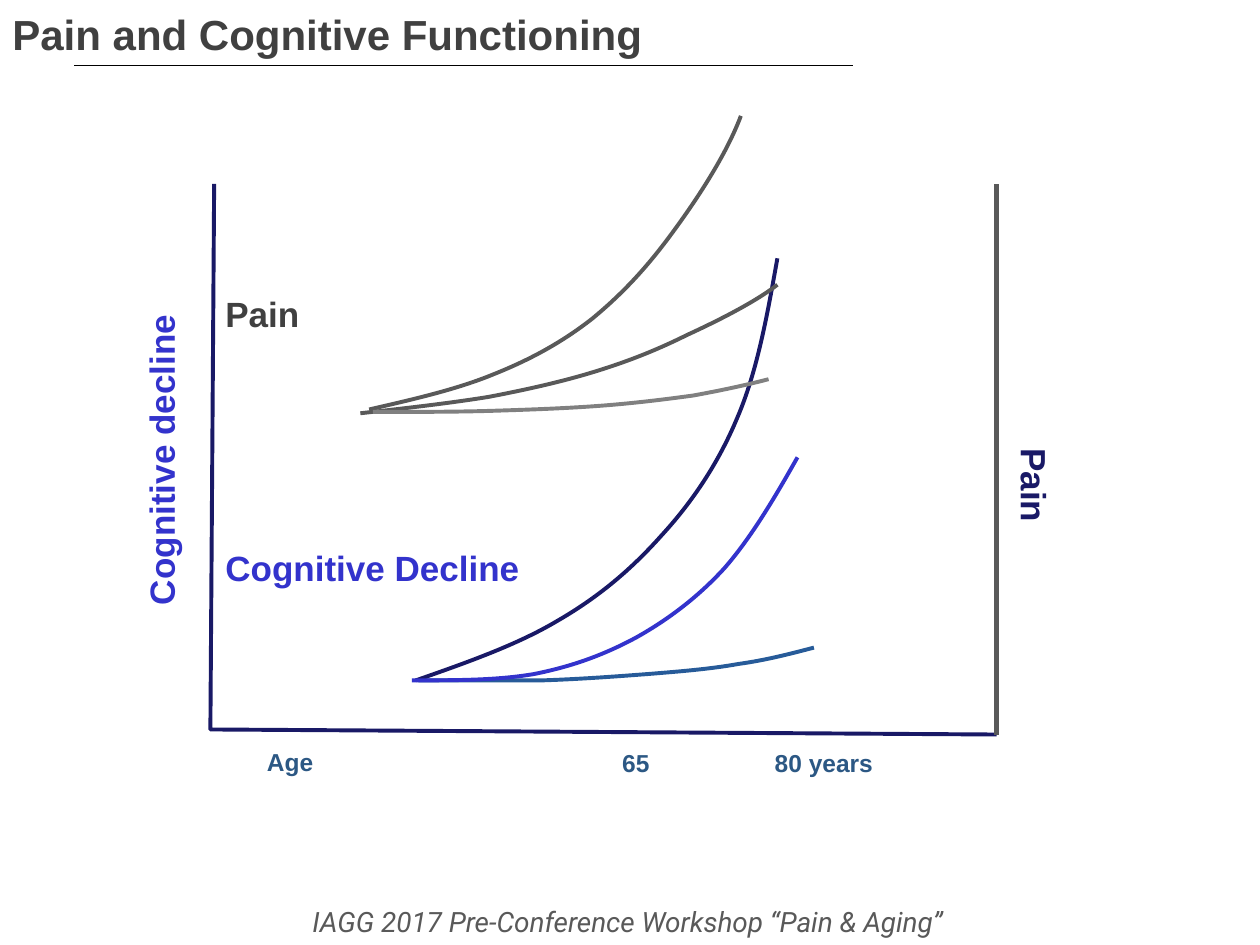
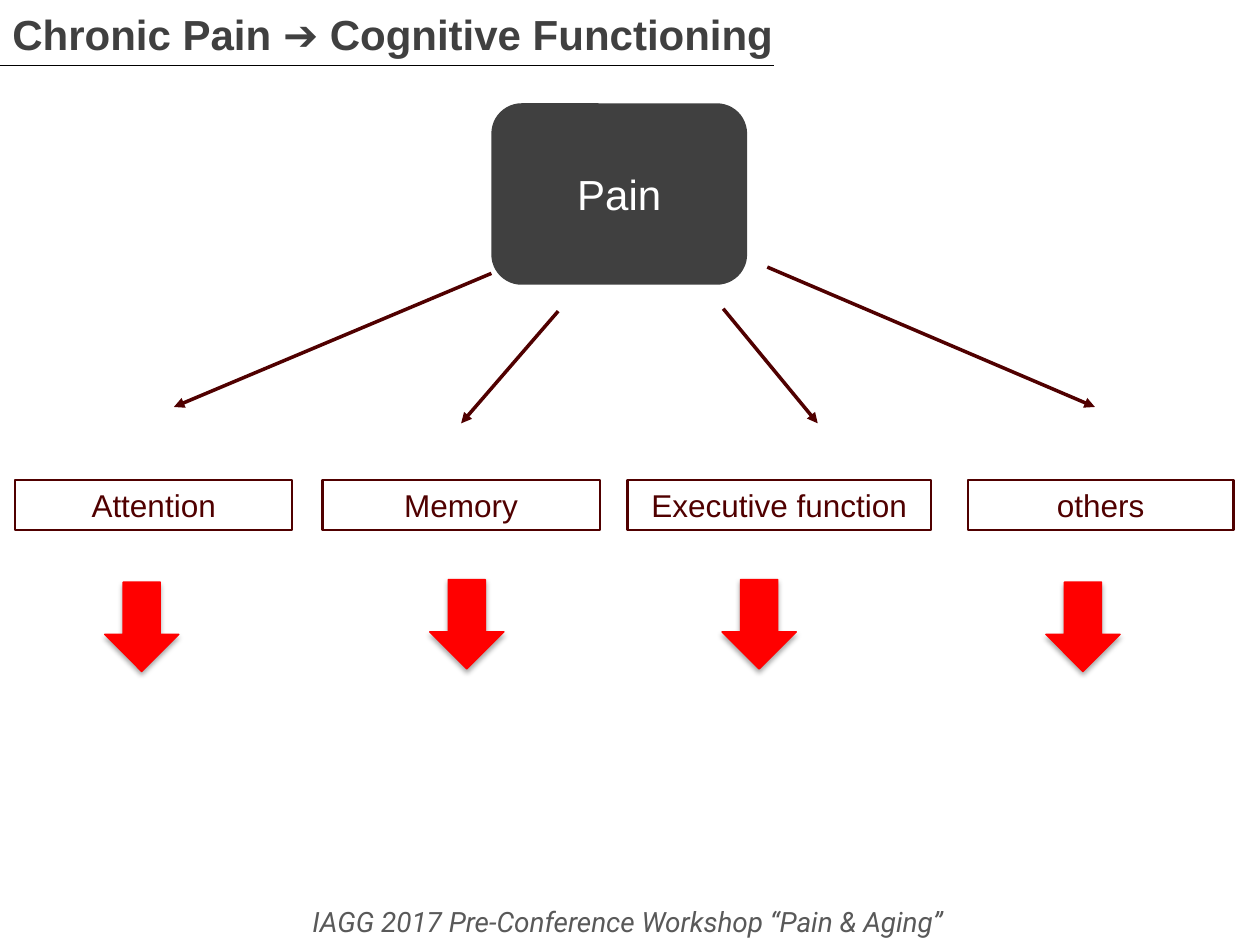
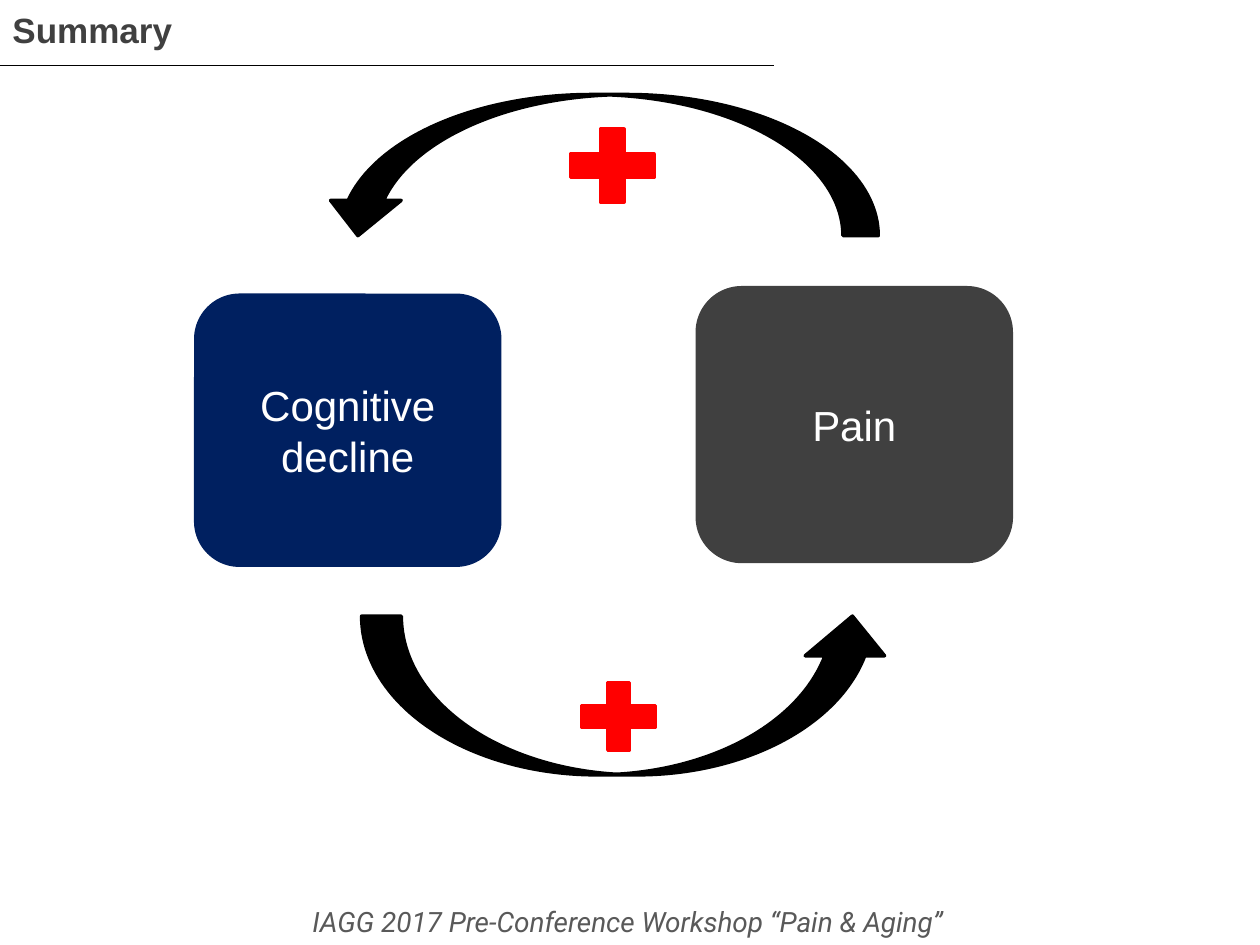
from lxml import etree
from pptx import Presentation
from pptx.dml.color import RGBColor
from pptx.enum import shapes, text
from pptx.oxml.ns import qn
from pptx.util import Inches, Pt

# Shared look
CHARCOAL, GREY, MAROON, RED, BLACK = "404040", "595959", "500000", "FF0000", "000000"
INDIGO, NAVY, AGE_BLUE, WHITE = "3333CC", "191966", "2C5884", "FFFFFF"
FOOTER = "IAGG 2017 Pre-Conference Workshop “Pain & Aging” "
SHAPE = shapes.MSO_SHAPE
CENTER = text.PP_ALIGN.CENTER

# Slide 1: text, box, size, colour, options
CHART_LABELS = [
    ("Cognitive decline", (0.02, 3.42, 2.52, 0.44), 20, INDIGO, {"rotation": 270}),
    ("Pain ", (6.66, 3.67, 3.1, 0.44), 20, NAVY,
     {"rotation": 90, "align": CENTER, "wrap": True}),
    ("Cognitive Decline", (1.69, 4.29, 2.55, 0.44), 20, INDIGO, {}),
    ("Pain", (1.69, 2.27, 1.84, 0.44), 20, CHARCOAL, {}),
    ("Age", (2.02, 5.88, 0.57, 0.34), 14, AGE_BLUE, {}),
    ("65", (4.84, 5.89, 0.5, 0.34), 14, AGE_BLUE, {}),
    ("80 years", (6.05, 5.89, 0.99, 0.34), 14, AGE_BLUE, {}),
]
AXES = [(1.7, 1.46), (1.67, 5.79), (7.91, 5.83)]
PAIN_AXIS = (7.91, 5.83), (7.91, 1.46)
# Each curve: start, then two handles and an end for every section
CURVES = [
    (GREY, [(2.93, 3.25), (3.28, 3.17), (3.63, 3.09), (3.92, 2.97),
            (4.22, 2.85), (4.47, 2.71), (4.7, 2.53), (4.93, 2.34), (5.12, 2.14),
            (5.32, 1.87), (5.52, 1.6), (5.76, 1.24), (5.88, 0.92)]),
    ("275B99", [(3.32, 5.4), (3.66, 5.4), (4.01, 5.4), (4.31, 5.4),
                (4.61, 5.39), (4.88, 5.37), (5.14, 5.35), (5.39, 5.33), (5.64, 5.31),
                (5.86, 5.27), (6.08, 5.24), (6.27, 5.19), (6.46, 5.14)]),
    (NAVY, [(3.3, 5.4), (3.7, 5.26), (4.1, 5.12), (4.42, 4.93),
            (4.75, 4.74), (5.01, 4.52), (5.25, 4.25), (5.49, 3.99), (5.7, 3.68),
            (5.85, 3.32), (6.01, 2.95), (6.09, 2.5), (6.17, 2.05)]),
    (INDIGO, [(3.27, 5.4), (3.61, 5.4), (3.95, 5.4), (4.24, 5.35),
              (4.54, 5.29), (4.79, 5.2), (5.05, 5.06), (5.3, 4.92), (5.54, 4.74),
              (5.75, 4.51), (5.96, 4.27), (6.15, 3.95), (6.33, 3.63)]),
    (GREY, [(2.86, 3.28), (3.22, 3.24), (3.57, 3.2), (3.88, 3.15),
            (4.19, 3.09), (4.46, 3.03), (4.72, 2.95), (4.98, 2.87), (5.21, 2.78),
            (5.45, 2.66), (5.69, 2.55), (5.99, 2.4), (6.17, 2.26)]),
    ("808080", [(2.96, 3.27), (3.3, 3.27), (3.65, 3.27), (3.95, 3.26),
                (4.26, 3.25), (4.52, 3.24), (4.78, 3.22), (5.04, 3.2), (5.28, 3.17),
                (5.5, 3.14), (5.72, 3.1), (5.91, 3.06), (6.1, 3.01)]),
]

# Slide 2: function, box left and width, ray from pain, top left of the down arrow
FUNCTIONS = [
    ("Attention", 0.12, 2.2, (3.9, 2.17), (1.38, 3.23), (0.83, 4.62)),
    ("Memory", 2.56, 2.2, (4.43, 2.47), (3.66, 3.36), (3.41, 4.6)),
    ("Executive function", 4.98, 2.41, (5.74, 2.45), (6.49, 3.36), (5.73, 4.6)),
    ("others", 7.68, 2.11, (6.09, 2.12), (8.69, 3.23), (8.3, 4.62)),
]

# Slide 3: the two states, and the arrows and plus signs of the loop
STATES = [("Cognitive decline", (1.54, 2.33, 2.44, 2.17), "002060"),
          ("Pain", (5.52, 2.27, 2.52, 2.2), CHARCOAL)]
LOOP = [
    (SHAPE.CURVED_UP_ARROW, (2.87, 4.89, 4.21, 1.26), BLACK, 0),
    (SHAPE.CURVED_UP_ARROW, (2.56, 0.75, 4.41, 1.12), BLACK, 180),
    (SHAPE.MATH_PLUS, (4.51, 5.32, 0.8, 0.73), RED, 0),
    (SHAPE.MATH_PLUS, (4.41, 0.92, 0.9, 0.79), RED, 0),
]


def rgb(color):
    return RGBColor.from_string(color)


def inches(values):
    return [Inches(value) for value in values]


def write(frame, words, size, color, font="Arial", bold=False, italic=False, align=None):
    frame.text = words
    line = frame.paragraphs[0]
    line.alignment = align
    line.font.name, line.font.size = font, Pt(size)
    line.font.bold, line.font.italic = bold, italic
    line.font.color.rgb = rgb(color)


def add_label(slide, words, box, size, color, rotation=0, wrap=False, **style):
    label = slide.shapes.add_textbox(*inches(box))
    label.rotation = rotation
    label.text_frame.word_wrap = wrap
    write(label.text_frame, words, size, color, **style)


def paint(shape, fill=None, line=None, width=1):
    shape.shadow.inherit = False
    if fill:
        shape.fill.solid()
        shape.fill.fore_color.rgb = rgb(fill)
    else:
        shape.fill.background()
    if line:
        shape.line.color.rgb = rgb(line)
        shape.line.width = Pt(width)
    else:
        shape.line.fill.background()


def add_block(slide, kind, box, words=None, size=24, color=WHITE, **look):
    block = slide.shapes.add_shape(kind, *inches(box))
    paint(block, **look)
    if words:
        block.text_frame.vertical_anchor = text.MSO_ANCHOR.MIDDLE
        write(block.text_frame, words, size, color, align=CENTER)
    return block


def add_line(slide, start, end, color, width, arrow=False):
    line = slide.shapes.add_connector(shapes.MSO_CONNECTOR.STRAIGHT, *inches(start + end))
    line.line.color.rgb = rgb(color)
    line.line.width = Pt(width)
    if arrow:
        etree.SubElement(line.line._get_or_add_ln(), qn("a:tailEnd"), type="triangle")
    etree.SubElement(line._element.spPr, qn("a:effectLst"))


def add_outline(slide, points, color, curved=False):
    start, *rest = [inches(point) for point in points]
    builder = slide.shapes.build_freeform(*start)
    builder.add_line_segments(rest, close=False)
    outline = builder.convert_to_shape()
    paint(outline, line=color, width=2.25)
    if curved:  # every three segments become one Bezier section
        segments = list(outline._element.iter(qn("a:lnTo")))
        for first, second, third in zip(*[iter(segments)] * 3):
            first.tag = qn("a:cubicBezTo")
            for other in (second, third):
                first.append(other[0])
                other.getparent().remove(other)


def add_soft_shadow(shape):
    effects = shape._element.spPr.find(qn("a:effectLst"))
    shadow = etree.SubElement(effects, qn("a:outerShdw"), blurRad=str(Pt(3.1)),
                              dist=str(Pt(1.8)), dir="5400000", rotWithShape="0")
    color = etree.SubElement(shadow, qn("a:srgbClr"), val=BLACK)
    etree.SubElement(color, qn("a:alpha"), val="35000")


def new_slide(deck, title, size=24, rule_left=-0.04):
    slide = deck.slides.add_slide(deck.slide_layouts[6])
    add_label(slide, FOOTER, (0.02, 7.13, 9.98, 0.37), 16, GREY, wrap=True,
              font="Roboto", italic=True, align=CENTER)
    add_line(slide, (rule_left, 0.52), (rule_left + 6.18, 0.52), BLACK, 0.75)
    add_label(slide, title, (0, 0.02, 9.39, 0.5), size, CHARCOAL, wrap=True, bold=True)
    return slide


def main():
    deck = Presentation()
    deck.slide_width, deck.slide_height = Inches(10), Inches(7.5)

    # Curves of pain and cognitive decline over age
    slide = new_slide(deck, "Pain and Cognitive Functioning", rule_left=0.59)
    add_outline(slide, AXES, NAVY)
    add_line(slide, *PAIN_AXIS, GREY, 3)
    for color, points in CURVES:
        add_outline(slide, points, color, curved=True)
    for words, box, size, color, options in CHART_LABELS:
        add_label(slide, words, box, size, color, bold=True, **options)

    # Pain acting on four functions
    slide = new_slide(deck, "Chronic Pain ➔ Cognitive Functioning")
    add_block(slide, SHAPE.FLOWCHART_ALTERNATE_PROCESS, (3.9, 0.82, 2.03, 1.44),
              "Pain", fill=CHARCOAL)
    for function, left, width, ray_start, ray_end, drop in FUNCTIONS:
        add_line(slide, ray_start, ray_end, MAROON, 2, arrow=True)
        add_block(slide, SHAPE.RECTANGLE, (left, 3.81, width, 0.4), function,
                  18, MAROON, line=MAROON, width=1.25)
        decrease = add_block(slide, SHAPE.DOWN_ARROW, drop + (0.59, 0.71),
                             fill=RED, line=RED, width=0.75)
        add_soft_shadow(decrease)

    # Loop between the two states
    slide = new_slide(deck, "Summary", size=20)
    for state, box, color in STATES:
        add_block(slide, SHAPE.FLOWCHART_ALTERNATE_PROCESS, box, state, fill=color)
    for kind, box, color, rotation in LOOP:
        part = add_block(slide, kind, box, fill=color, line=color, width=2)
        part.rotation = rotation

    deck.save("out.pptx")


if __name__ == "__main__":
    main()
